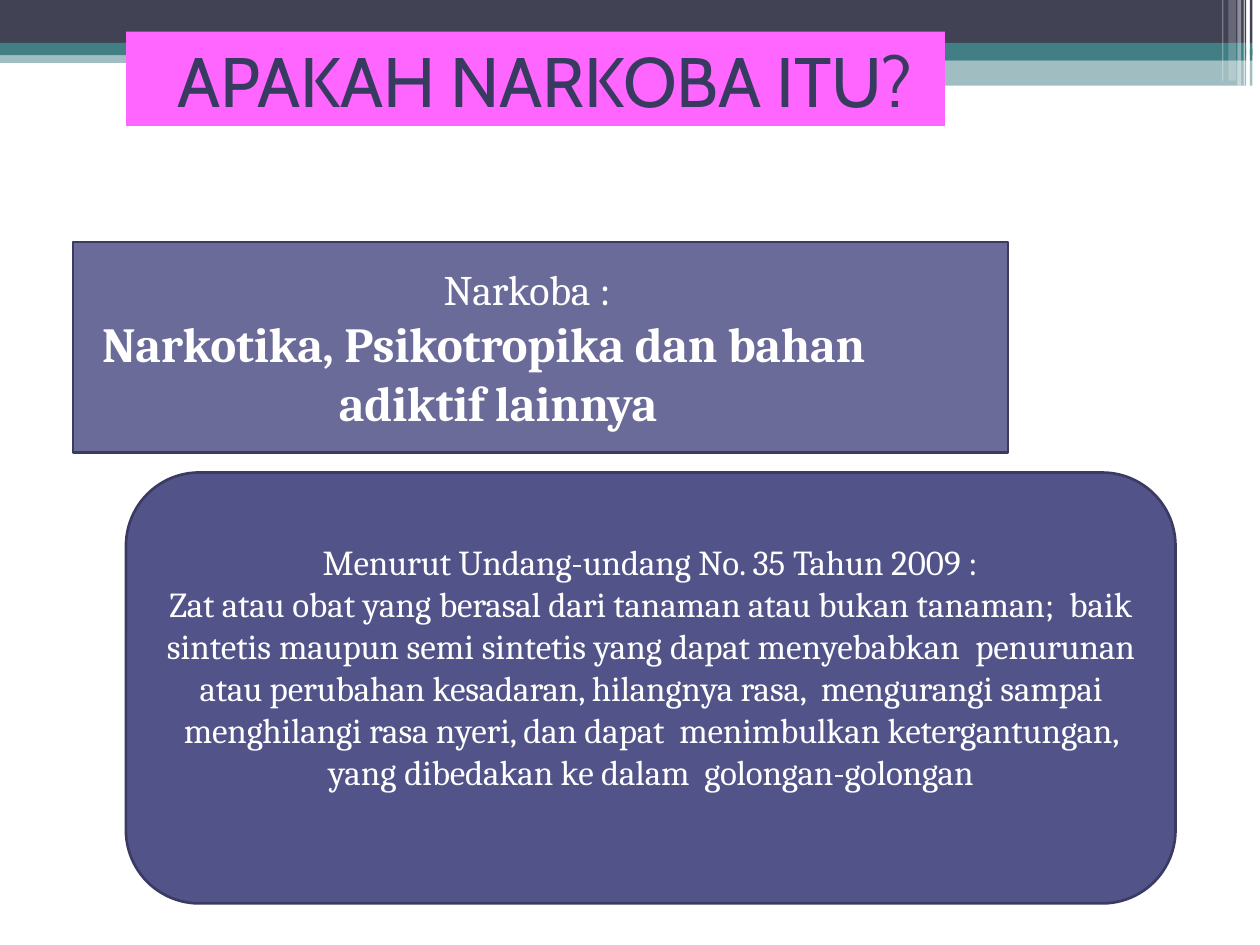
from dataclasses import dataclass
from lxml.etree import SubElement
from pptx import Presentation
from pptx.dml.color import RGBColor as RGB
from pptx.enum.shapes import MSO_SHAPE as Kind
from pptx.enum.text import MSO_ANCHOR as Anchor, MSO_AUTO_SIZE as Auto, PP_ALIGN as Align
from pptx.oxml.ns import qn
from pptx.util import Inches, Pt


@dataclass(frozen=True)
class Theme:
    dark: str = "414355"
    teal: str = "427F85"
    white: str = "FFFFFF"
    pink: str = "FF66FF"
    ink: str = "373B5F"
    plum: str = "525389"
    edge: str = "3A3A63"
    head: str = "Cabin"
    text: str = "Cambria"
    big: int = 40
    bold: int = 28
    lead: int = 24
    body: int = 20


theme = Theme()


def paint(shape, color, alpha=100, edge=None):
    shape.shadow.inherit = False
    shape.fill.solid()
    shape.fill.fore_color.rgb = RGB.from_string(color)
    if alpha < 100:
        tint = shape.element.spPr.find(qn("a:solidFill"))[0]
        SubElement(tint, qn("a:alpha")).set("val", str(alpha * 1000))
    if edge:
        shape.line.color.rgb = RGB.from_string(edge)
        shape.line.width = Pt(1.5)
    else:
        shape.line.fill.background()


def write(shape, top, paras):
    frame = shape.text_frame
    frame.word_wrap = True
    frame.auto_size = Auto.NONE
    frame.vertical_anchor = Anchor.TOP
    frame.margin_left = frame.margin_right = frame.margin_bottom = 0
    frame.margin_top = Inches(top)
    for i, (align, left, first, before, font, size, bold, color, runs) in enumerate(paras):
        para = frame.add_paragraph() if i else frame.paragraphs[0]
        para.alignment = align
        para.space_before = Pt(before)
        props = para._p.get_or_add_pPr()
        props.set("marL", str(Inches(left)))
        props.set("indent", str(Inches(first)))
        for words, tight in runs:
            run = para.add_run()
            run.text = words
            run.font.name = font
            run.font.size = Pt(size)
            run.font.bold = bold
            run.font.color.rgb = RGB.from_string(color)
            run.font._element.set("spc", "-10" if tight else "0")


deck = Presentation()
deck.slide_width, deck.slide_height = Inches(10), Inches(7.5)
slide = deck.slides.add_slide(deck.slide_layouts[5])
shapes = slide.shapes

split = 9.89
tail = (9.92, 9.94)
bands = [
    ([(0, 1)], 0.44, 0.06, theme.teal, 50),
    ([(0, split), tail], 0, 0.34, theme.dark, 100),
    ([(0, 1)], 0.34, 0.1, theme.teal, 100),
    ([(7.5, split), tail], 0.34, 0.1, theme.teal, 100),
    ([(7.5, split), tail], 0.39, 0.09, theme.teal, 100),
    ([(7.5, split), tail], 0.48, 0.2, theme.teal, 50),
    ([(9.87, 9.88)], 0, 0.68, theme.white, 60),
    ([(9.82, 9.85)], 0, 0.68, theme.white, 40),
    ([(9.75, 9.81)], 0, 0.64, theme.white, 20),
    ([(9.7, 9.71)], 0, 0.64, theme.white, 30),
]
for spans, top, high, color, alpha in bands:
    left, right = spans[0]
    if len(spans) == 1:
        band = shapes.add_shape(Kind.RECTANGLE, Inches(left), Inches(top),
                                Inches(right - left), Inches(high))
    else:
        pen = shapes.build_freeform(Inches(left), Inches(top))
        for start, end in spans:
            if start != left:
                pen.move_to(Inches(start), Inches(top))
            pen.add_line_segments([(Inches(x), Inches(y)) for x, y in
                                   [(end, top), (end, top + high), (start, top + high)]])
        band = pen.convert_to_shape()
    paint(band, color, alpha)

title = shapes.title
title.left, title.top, title.width, title.height = map(Inches, (1, 0.25, 6.5, 0.75))
title.element.getparent().append(title.element)
title.fill.solid()
title.fill.fore_color.rgb = RGB.from_string(theme.pink)
write(title, 0.05, [(Align.LEFT, 0.41, 0, 3.7, theme.head, theme.big, False, theme.ink,
                     [("APAKAH NARKOBA ITU?", True)])])

term = shapes.add_shape(Kind.RECTANGLE, *map(Inches, (0.58, 1.92, 7.42, 1.67)))
paint(term, theme.plum, 86, theme.edge)
write(term, 0.17, [
    (Align.LEFT, 2.94, 0, 12, theme.text, theme.lead, False, theme.white,
     [("Narkoba ", True), (":", False)]),
    (Align.LEFT, 2.11, -1.88, 0, theme.text, theme.bold, True, theme.white,
     [("Narkotika, Psikotropika dan bahan  adiktif lainnya", True)]),
])

panel = shapes.add_shape(Kind.ROUNDED_RECTANGLE, *map(Inches, (1, 3.75, 8.33, 3.42)))
panel.adjustments[0] = 0.17
paint(panel, theme.plum, edge=theme.edge)

law = shapes.add_textbox(*map(Inches, (1.27, 4.28, 7.78, 2.36)))
write(law, 0.01, [
    (Align.CENTER, 0, 0, 1, theme.text, theme.body, False, theme.white, [
        ("Menurut Undang-undang No. ", True), ("35 ", False),
        ("Tahun ", True), ("2009 :", False)]),
    (Align.CENTER, 0.01, 0, 0, theme.text, theme.body, False, theme.white, [
        ("Zat atau ", True), ("obat yang ", False),
        ("berasal dari tanaman atau bukan ", True),
        ("tanaman;  baik sintetis ", False), ("maupun ", True),
        ("semi sintetis yang ", False), ("dapat ", True),
        ("menyebabkan  ", False),
        ("penurunan atau perubahan kesadaran, hilangnya rasa,  mengurangi sampai "
         "menghilangi rasa nyeri, dan dapat  menimbulkan ketergantungan, ", True),
        ("yang ", False), ("dibedakan ke dalam  golongan-golongan", True)]),
])

deck.save("out.pptx")
